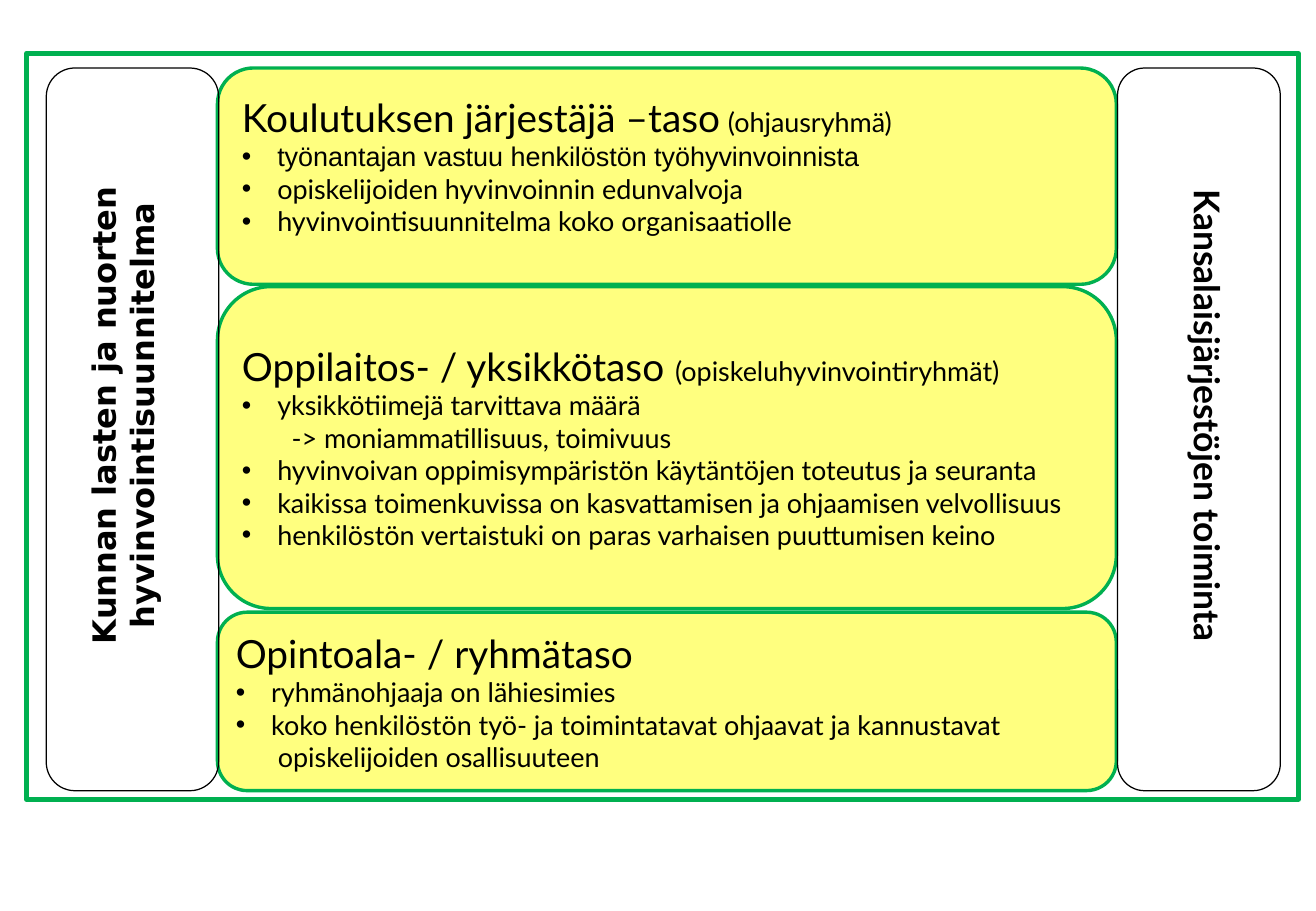
from pptx import Presentation
from pptx.dml.color import RGBColor
from pptx.enum import shapes, text
from pptx.oxml.ns import qn
from pptx.util import Pt
from lxml import etree

GREEN, YELLOW, BLACK = "00B050", "FFFF00", "000000"
INSETS = (8.64, 4.32)
LEVEL_LEFT, LEVEL_WIDTH = 128.9, 532.8
COLUMN_TOP, COLUMN_HEIGHT = 40.3, 428.4

LEVELS = [
    {"idx": 1, "top": 40.3, "height": 128.2, "dx": 5.8, "dy": 10.8, "body": 94.3,
     "heading": [("Koulutuksen järjestäjä –taso", 23), (" (ohjausryhmä)", 16)],
     "items": [("työnantajan vastuu henkilöstön työhyvinvoinnista", 0, "Arial"),
               ("opiskelijoiden hyvinvoinnin edunvalvoja", 0, "Lato"),
               ("hyvinvointisuunnitelma koko organisaatiolle", 0, "Lato")]},
    {"idx": 2, "top": 169.9, "height": 190.8, "dx": 5.8, "dy": 28.8, "body": 133.2,
     "heading": [("Oppilaitos- / yksikkötaso ", 23), ("(opiskeluhyvinvointiryhmät)", 16)],
     "items": [("yksikkötiimejä tarvittava määrä", 0, "Lato"),
               ("-> moniammatillisuus, toimivuus", 8.5, "Lato"),
               ("hyvinvoivan oppimisympäristön käytäntöjen toteutus ja seuranta", 0, "Lato"),
               ("kaikissa toimenkuvissa on kasvattamisen ja ohjaamisen velvollisuus", 0, "Lato"),
               ("henkilöstön vertaistuki on paras varhaisen puuttumisen keino", 0, "Lato")]},
    {"idx": 3, "top": 362.9, "height": 105.8, "dx": 2.2, "dy": 5.8, "body": 94.3,
     "heading": [("Opintoala- / ryhmätaso", 23)],
     "items": [("ryhmänohjaaja on lähiesimies", 0, "Lato"),
               ("koko henkilöstön työ- ja toimintatavat ohjaavat ja kannustavat", 0, "Lato"),
               ("opiskelijoiden osallisuuteen", 4, "Lato")]},
]


def rgb(value):
    """Return the colour for a hex string."""
    return RGBColor.from_string(value)


def add_box(slide, kind, box, line, width, fill=None):
    """Add an outlined shape, with a half-transparent fill if one is given."""
    sp = slide.shapes.add_shape(kind, *map(Pt, box))
    sp.shadow.inherit = False
    sp.line.color.rgb = rgb(line)
    sp.line.width = Pt(width)
    if fill:
        sp.fill.solid()
        sp.fill.fore_color.rgb = rgb(fill)
        clr = sp._element.spPr.find(".//" + qn("a:srgbClr"))
        etree.SubElement(clr, qn("a:alpha"), val="50000")
    else:
        sp.fill.background()


def setup_frame(tf):
    """Set the insets, wrapping and anchor of a text frame."""
    tf.margin_left = tf.margin_right = Pt(INSETS[0])
    tf.margin_top = tf.margin_bottom = Pt(INSETS[1])
    tf.word_wrap = True
    tf.auto_size = text.MSO_AUTO_SIZE.NONE
    tf.vertical_anchor = text.MSO_ANCHOR.TOP


def format_run(r, size, font, bold=False):
    """Format a run in black."""
    r.font.size = Pt(size)
    r.font.name = font
    r.font.bold = bold
    r.font.color.rgb = rgb(BLACK)


def set_indent(p, left, bullet):
    """Set the left indent of a paragraph and its hanging bullet, if any."""
    pPr = p._p.get_or_add_pPr()
    pPr.set("marL", str(Pt(left)))
    pPr.set("indent", str(Pt(-left if bullet else 0)))
    if bullet:
        etree.SubElement(pPr, qn("a:buFont"), typeface="Arial")
        etree.SubElement(pPr, qn("a:buChar"), char="•")
    else:
        etree.SubElement(pPr, qn("a:buNone"))
    p.space_before = Pt(0)


def add_level(slide, box, level):
    """Add a yellow level box with its heading and list."""
    left, top, width, height = box
    add_box(slide, shapes.MSO_SHAPE.ROUNDED_RECTANGLE, box, GREEN, 2, YELLOW)
    body = slide.placeholders[level["idx"]]
    slide.shapes._spTree.append(body._element)
    body.left, body.top = Pt(left + level["dx"]), Pt(top + level["dy"])
    body.width, body.height = Pt(width - 2 * level["dx"]), Pt(level["body"])
    tf = body.text_frame
    setup_frame(tf)
    p = tf.paragraphs[0]
    set_indent(p, 0, False)
    for words, size in level["heading"]:
        r = p.add_run()
        r.text = words
        format_run(r, size, "Lato")
    for words, extra, font in level["items"]:
        p = tf.add_paragraph()
        p.text = words
        set_indent(p, 21 + extra, not extra)
        format_run(p.runs[0], 16, font)


def add_side(slide, box, label, text_dx, text_width, vert, size, font):
    """Add a side column with its rotated label."""
    left, top, width, height = box
    add_box(slide, shapes.MSO_SHAPE.ROUNDED_RECTANGLE, box, BLACK, 0.75)
    sp = slide.shapes.add_textbox(Pt(left + text_dx), Pt(top + 10),
                                  Pt(text_width), Pt(392))
    tf = sp.text_frame
    setup_frame(tf)
    tf._txBody.bodyPr.set("vert", vert)
    tf.text = label
    p = tf.paragraphs[0]
    p.alignment = text.PP_ALIGN.CENTER
    format_run(p.runs[0], size, font, True)


def main():
    """Build the slide and save it."""
    prs = Presentation()
    prs.slide_width, prs.slide_height = Pt(780), Pt(540)
    slide = prs.slides.add_slide(prs.slide_layouts[4])
    for level in LEVELS:
        box = (LEVEL_LEFT, level["top"], LEVEL_WIDTH, level["height"])
        add_level(slide, box, level)
    add_side(slide, (27.4, COLUMN_TOP, 102.2, COLUMN_HEIGHT),
             "Kunnan lasten ja nuorten hyvinvointisuunnitelma",
             13.6, 63.4, "vert270", 19, "DejaVu Sans")
    add_side(slide, (662.4, COLUMN_TOP, 96.5, COLUMN_HEIGHT),
             "Kansalaisjärjestöjen toiminta",
             32.4, 42.5, "vert", 21, "Lato")
    add_box(slide, shapes.MSO_SHAPE.RECTANGLE, (15.8, 31.7, 753.8, 442.1), GREEN, 3)
    for ph in list(slide.placeholders):
        if not ph.text_frame.text:
            ph._element.getparent().remove(ph._element)
    prs.save("out.pptx")


if __name__ == "__main__":
    main()
